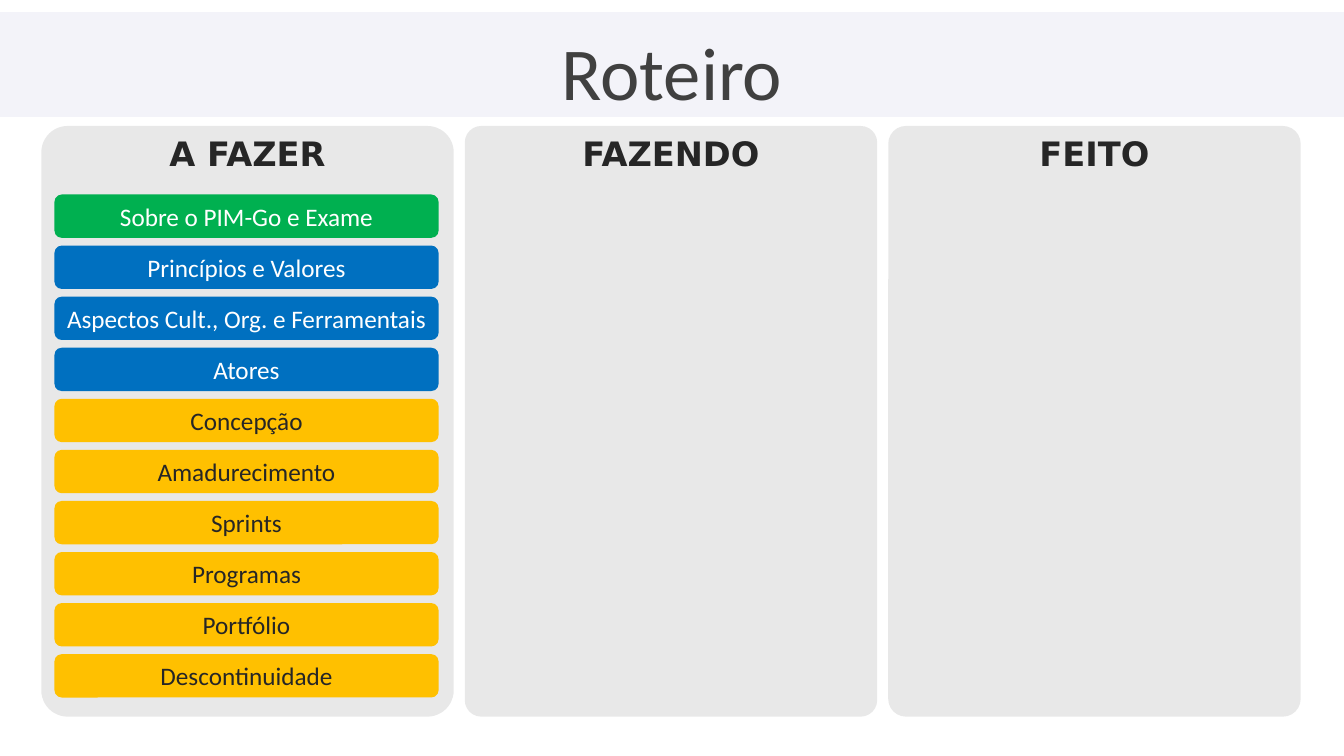
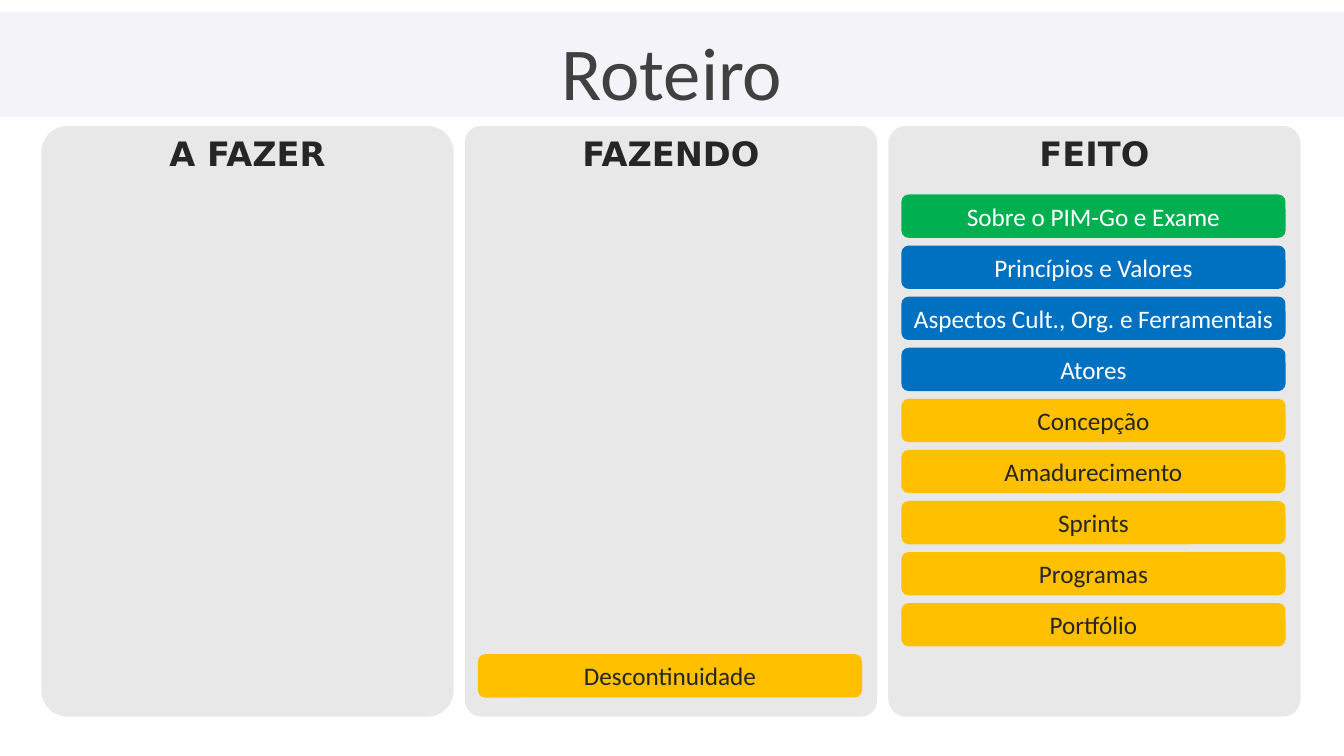
from dataclasses import dataclass

from lxml.etree import SubElement
from pptx import Presentation
from pptx.dml.color import RGBColor
from pptx.enum.shapes import MSO_SHAPE
from pptx.enum.text import MSO_ANCHOR, MSO_AUTO_SIZE, PP_ALIGN
from pptx.oxml.ns import qn
from pptx.util import Inches, Pt


@dataclass(frozen=True)
class Theme:
    band: str = "615CAA"
    band_alpha: int = 7000
    column: str = "E8E8E8"
    title: str = "404040"
    dark: str = "262626"
    light: str = "FFFFFF"
    green: str = "00B050"
    blue: str = "0070C0"
    amber: str = "FFC000"
    body_font: str = "Calibri"
    heading_font: str = "DejaVu Sans"
    title_size: float = 53.3
    heading_size: int = 24
    card_size: int = 18


THEME = Theme()
SLIDE_WIDTH, SLIDE_HEIGHT = 13.33, 7.5
COLUMN_LEFT, COLUMN_TOP, COLUMN_PITCH = 0.41, 1.25, 4.2
COLUMN_WIDTH, COLUMN_HEIGHT = 4.09, 5.86
HEADING_WIDTH = 2
CARD_INSET, CARD_TOP, CARD_BOTTOM = 0.13, 1.93, 6.92
CARD_WIDTH, CARD_HEIGHT = 3.81, 0.43

COLUMNS = [("A FAZER", 0.064), ("FAZENDO", 0.04), ("FEITO", 0.043)]
TO_DO, DOING, DONE = range(3)
CARDS = [
    ("Sobre o PIM-Go e Exame", THEME.green, THEME.light),
    ("Princípios e Valores", THEME.blue, THEME.light),
    ("Aspectos Cult., Org. e Ferramentais", THEME.blue, THEME.light),
    ("Atores", THEME.blue, THEME.light),
    ("Concepção", THEME.amber, THEME.dark),
    ("Amadurecimento", THEME.amber, THEME.dark),
    ("Sprints", THEME.amber, THEME.dark),
    ("Programas", THEME.amber, THEME.dark),
    ("Portfólio", THEME.amber, THEME.dark),
    ("Descontinuidade", THEME.amber, THEME.dark),
]
CARD_PITCH = (CARD_BOTTOM - CARD_HEIGHT - CARD_TOP) / (len(CARDS) - 1)
BOARDS = [
    [TO_DO] * len(CARDS),
    [DONE] * (len(CARDS) - 1) + [DOING],
]


class Board:
    """Draws kanban slides in one style."""

    def __init__(self, theme):
        self.theme = theme
        self.deck = Presentation()
        self.deck.slide_width = Inches(SLIDE_WIDTH)
        self.deck.slide_height = Inches(SLIDE_HEIGHT)
        self.page = None

    def add_page(self, title):
        self.page = self.deck.slides.add_slide(self.deck.slide_layouts[5])
        self.add_title(title)
        self.add_band()

    def add_title(self, text):
        box = self.page.shapes.title
        box.left, box.top = Inches(0), Inches(0.31)
        box.width, box.height = Inches(SLIDE_WIDTH), Inches(0.84)
        frame = box.text_frame
        frame.auto_size = MSO_AUTO_SIZE.NONE
        frame.margin_top, frame.margin_bottom = Inches(0.1), Inches(0)
        self.set_text(box, text, self.theme.body_font, self.theme.title_size, self.theme.title)
        frame.paragraphs[0].line_spacing = 0.8

    def add_band(self):
        band = self.fill_shape(self.page.shapes, MSO_SHAPE.RECTANGLE,
                               (0, 0.12, SLIDE_WIDTH, 1.04), self.theme.band)
        color = band.element.spPr.find(qn("a:solidFill")).find(qn("a:srgbClr"))
        SubElement(color, qn("a:alpha"), val=str(self.theme.band_alpha))
        self.page.shapes.title.element.addprevious(band.element)

    def add_column(self, index, heading, corner):
        left = COLUMN_LEFT + index * COLUMN_PITCH
        group = self.page.shapes.add_group_shape()
        panel = self.fill_shape(group.shapes, MSO_SHAPE.ROUNDED_RECTANGLE,
                                (left, COLUMN_TOP, COLUMN_WIDTH, COLUMN_HEIGHT), self.theme.column)
        panel.adjustments[0] = corner
        heading_left = left + (COLUMN_WIDTH - HEADING_WIDTH) / 2
        box = group.shapes.add_textbox(Inches(heading_left), Inches(1.27), Inches(HEADING_WIDTH), Inches(0.55))
        box.text_frame.word_wrap = False
        self.set_text(box, heading, self.theme.heading_font, self.theme.heading_size,
                      self.theme.dark, bold=True, anchor=MSO_ANCHOR.TOP)

    def add_card(self, column, row, text, fill, color):
        left = COLUMN_LEFT + column * COLUMN_PITCH + CARD_INSET
        top = CARD_TOP + row * CARD_PITCH
        card = self.fill_shape(self.page.shapes, MSO_SHAPE.ROUNDED_RECTANGLE,
                               (left, top, CARD_WIDTH, CARD_HEIGHT), fill)
        frame = card.text_frame
        frame.margin_left = frame.margin_right = Inches(0.04)
        self.set_text(card, text, self.theme.body_font, self.theme.card_size, color)

    def fill_shape(self, shapes, preset, place, fill):
        shape = shapes.add_shape(preset, *map(Inches, place))
        shape.shadow.inherit = False
        shape.fill.solid()
        shape.fill.fore_color.rgb = RGBColor.from_string(fill)
        shape.line.fill.background()
        return shape

    def set_text(self, box, text, font, size, color, bold=False, anchor=MSO_ANCHOR.MIDDLE):
        frame = box.text_frame
        frame.text = text
        frame.vertical_anchor = anchor
        para = frame.paragraphs[0]
        para.alignment = PP_ALIGN.CENTER
        span = para.runs[0]
        span.font.name = font
        span.font.size = Pt(size)
        span.font.bold = bold
        span.font.color.rgb = RGBColor.from_string(color)


def main():
    board = Board(THEME)
    for columns_of_cards in BOARDS:
        board.add_page("Roteiro")
        for index, (heading, corner) in enumerate(COLUMNS):
            board.add_column(index, heading, corner)
        for row, (column, card) in enumerate(zip(columns_of_cards, CARDS)):
            board.add_card(column, row, *card)
    board.deck.save("out.pptx")


if __name__ == "__main__":
    main()
